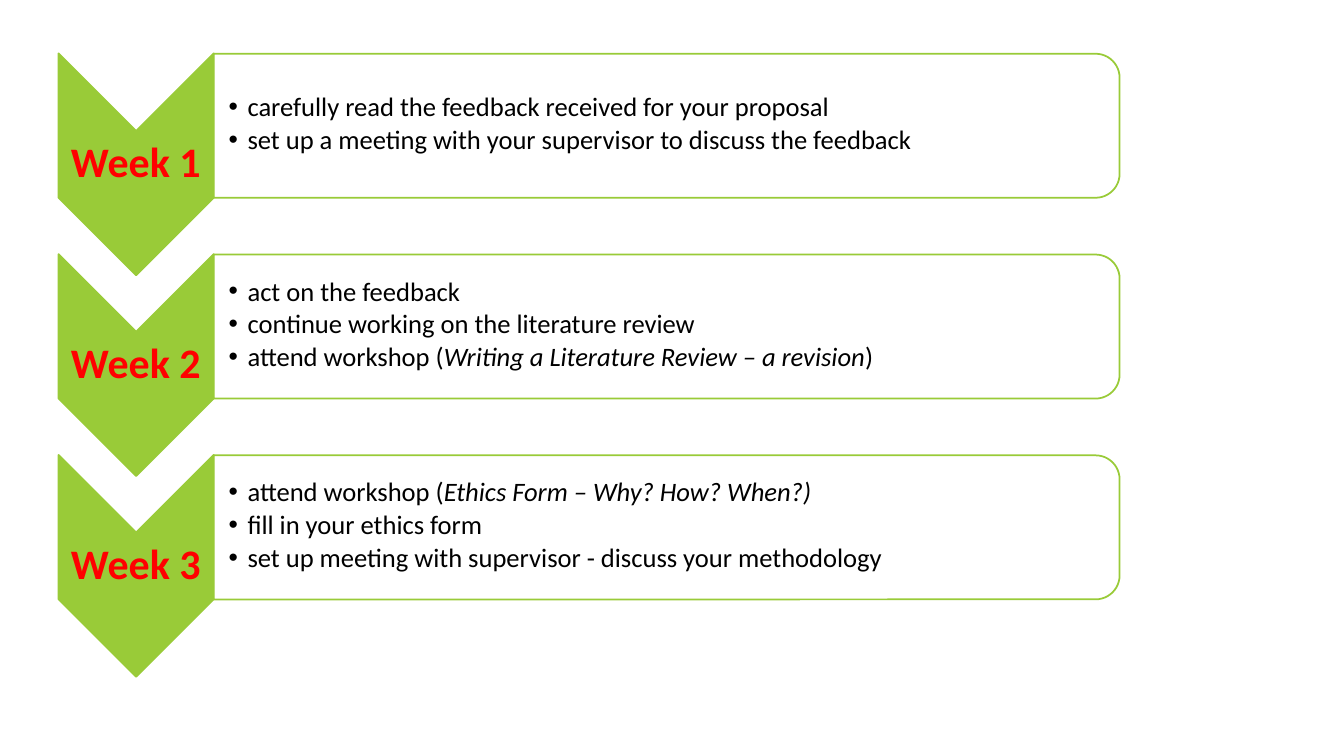
"""Build a slide with a three-week plan of chevrons and task boxes."""
from lxml import etree
from pptx import Presentation
from pptx import util as u
from pptx.dml.color import RGBColor
from pptx.enum import shapes, text
from pptx.oxml.ns import qn

GREEN, WHITE, RED, BLACK = "99CB38", "FFFFFF", "FF0000", "000000"
STEP = 5.06
WEEKS = [
    ("Week 1", ["carefully read the feedback received for your proposal",
                "set up a meeting with your supervisor to discuss the feedback"]),
    ("Week 2", ["act on the feedback",
                "continue working on the literature review",
                "attend workshop (*Writing a Literature Review – a revision*)"]),
    ("Week 3", ["attend workshop (*Ethics Form – Why? How? When?)*",
                "fill in your ethics form",
                "set up meeting with supervisor - discuss your methodology"]),
]
FORMS = [
    dict(kind=shapes.MSO_SHAPE.CHEVRON, mid=(3.43, 4.14), size=(5.59, 3.91),
         fill=GREEN, alpha=100),
    dict(kind=shapes.MSO_SHAPE.ROUND_2_SAME_RECTANGLE, mid=(16.8, 3.17),
         size=(3.63, 22.83), fill=WHITE, alpha=90),
]
LABEL = dict(box=(1.47, 3.3, 3.91, 1.68), left=0.05, edge=0.05, size=30,
             bold=True, color=RED, align=text.PP_ALIGN.CENTER, after=0)
TASKS = dict(box=(5.38, 1.5, 22.66, 3.28), left=0.38, edge=0.03, size=19,
             bold=False, color=BLACK, align=text.PP_ALIGN.LEFT, after=3)


def rgb(code):
    return RGBColor.from_string(code)


def write(slide, lines, form, drop, dots):
    x, y, w, h = form["box"]
    box = slide.shapes.add_textbox(u.Cm(x), u.Cm(y + drop), u.Cm(w), u.Cm(h))
    frame = box.text_frame
    frame.word_wrap = True
    frame.vertical_anchor = text.MSO_ANCHOR.MIDDLE
    frame.margin_left = u.Cm(form["left"])
    for side in ("right", "top", "bottom"):
        setattr(frame, "margin_" + side, u.Cm(form["edge"]))
    for i, line in enumerate(lines):
        para = frame.add_paragraph() if i else frame.paragraphs[0]
        para.alignment = form["align"]
        para.line_spacing = 0.9
        para.space_after = u.Pt(form["after"])
        if dots:
            props = para._p.get_or_add_pPr()
            props.set("marL", str(u.Cm(0.48)))
            props.set("indent", str(u.Cm(-0.48)))
            etree.SubElement(props, qn("a:buFont"), typeface="Arial")
            etree.SubElement(props, qn("a:buChar"), char="•")
        for n, part in enumerate(line.split("*")):
            if part:
                run = para.add_run()
                run.text = part
                look = dict(name="Calibri", size=u.Pt(form["size"]),
                            bold=form["bold"], italic=n % 2 == 1)
                for key, value in look.items():
                    setattr(run.font, key, value)
                run.font.color.rgb = rgb(form["color"])


deck = Presentation()
deck.slide_width, deck.slide_height = u.Cm(33.87), u.Cm(19.05)
slide = deck.slides.add_slide(deck.slide_layouts[6])

for row, (week, tasks) in enumerate(WEEKS):
    drop = row * STEP
    for form in FORMS:
        (x, y), (w, h) = form["mid"], form["size"]
        shape = slide.shapes.add_shape(
            form["kind"], u.Cm(x - w / 2), u.Cm(y + drop - h / 2), u.Cm(w), u.Cm(h))
        shape.rotation = 90
        shape.shadow.inherit = False
        shape.fill.solid()
        shape.fill.fore_color.rgb = rgb(form["fill"])
        if form["alpha"] < 100:
            tint = shape._element.spPr.find(qn("a:solidFill"))[0]
            etree.SubElement(tint, qn("a:alpha"), val=str(form["alpha"] * 1000))
        shape.line.color.rgb = rgb(GREEN)
        shape.line.width = u.Pt(1.25)
    write(slide, [week], LABEL, drop, False)
    write(slide, tasks, TASKS, drop, True)

deck.save("out.pptx")
